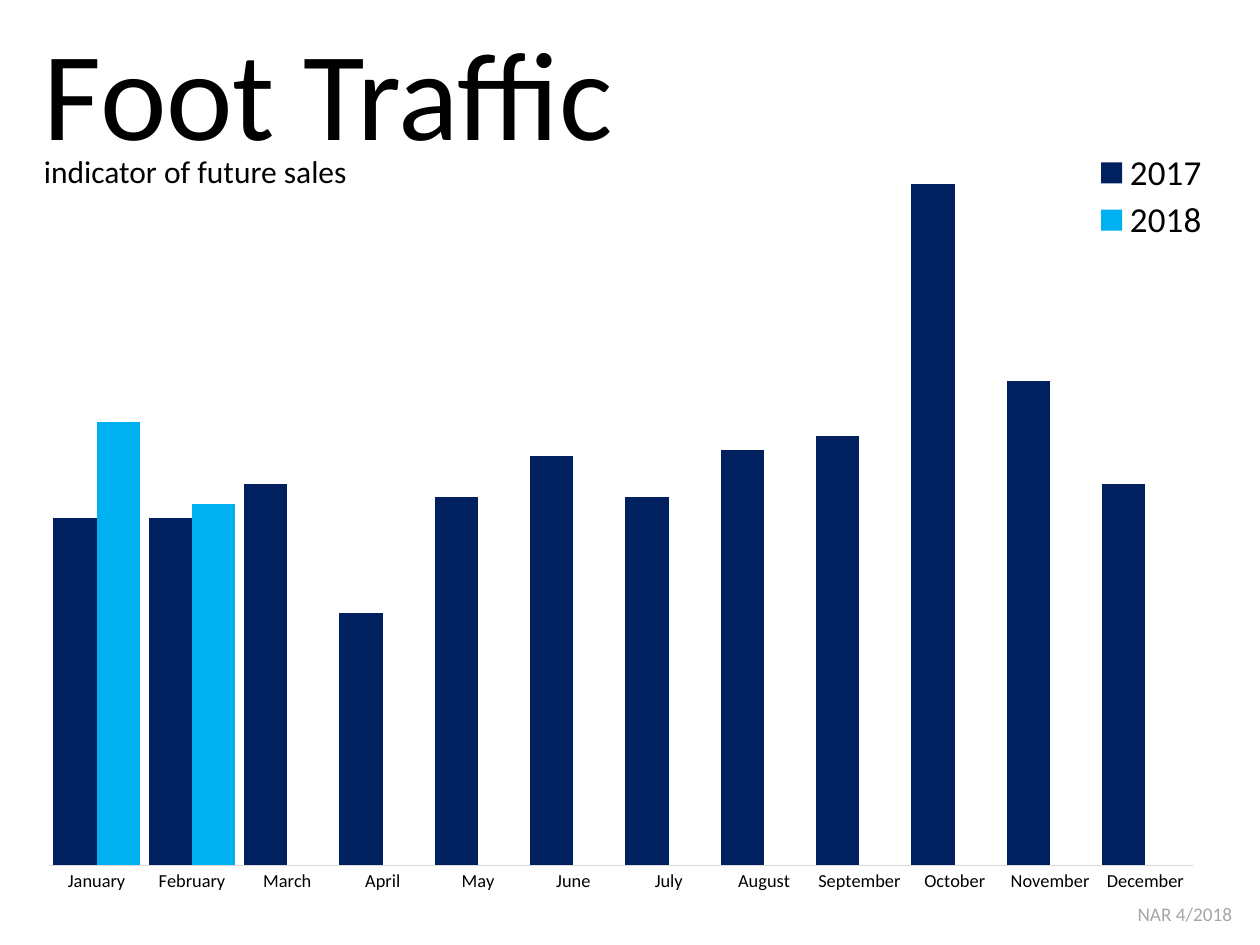
import pptx
import pptx.chart.data
import pptx.dml.color
import pptx.enum.chart
import pptx.enum.text
import pptx.oxml
import pptx.oxml.ns
import pptx.util
from pptx.util import Inches

MONTHS = ["January", "February", "March", "April", "May", "June", "July",
          "August", "September", "October", "November", "December"]
TRAFFIC = {
    "2017": ("002060", [51, 51, 56, 37, 54, 60, 54, 61, 63, 100, 71, 56]),
    "2018": ("00B0F0", [65, 53] + [None] * 10),
}


def color(code):
    return pptx.dml.color.RGBColor.from_string(code)


def layout(node, index, x, y, w, h, inner=False):
    """Place a chart part by fractions of the chart area."""
    for old in node.findall(pptx.oxml.ns.qn("c:layout")):
        node.remove(old)
    target = '<c:layoutTarget val="inner"/>' if inner else ""
    sizes = "".join(f'<c:{tag} val="{val}"/>'
                    for tag, val in zip("xywh", (x, y, w, h)))
    node.insert(index, pptx.oxml.parse_xml(
        f'<c:layout {pptx.oxml.ns.nsdecls("c")}><c:manualLayout>{target}'
        f'<c:xMode val="edge"/><c:yMode val="edge"/>{sizes}'
        '</c:manualLayout></c:layout>'))


class Deck:
    face = "Calibri"
    ink = "000000"
    pale = "A6A6A6"
    rule = "D9D9D9"

    def __init__(self, slide):
        self.slide = slide

    def style(self, font, size, code=None):
        font.name = self.face
        font.size = pptx.util.Pt(size)
        font.color.rgb = color(code or self.ink)

    def text(self, words, x, y, w, h, size, code=None, wrap=True, right=False):
        box = self.slide.shapes.add_textbox(
            Inches(x), Inches(y), Inches(w), Inches(h))
        frame = box.text_frame
        frame.word_wrap = wrap
        frame.text = words
        line = frame.paragraphs[0]
        if right:
            line.alignment = pptx.enum.text.PP_ALIGN.RIGHT
        self.style(line.runs[0].font, size, code)

    def columns(self, names, series, x, y, w, h):
        data = pptx.chart.data.CategoryChartData()
        data.categories = names
        for name, (_, vals) in series.items():
            data.add_series(name, vals)
        chart = self.slide.shapes.add_chart(
            pptx.enum.chart.XL_CHART_TYPE.COLUMN_CLUSTERED,
            Inches(x), Inches(y), Inches(w), Inches(h), data).chart
        chart.has_title = False
        self.style(chart.font, 10)

        plot = chart.plots[0]
        plot.gap_width = 20
        plot.overlap = 0
        plot.vary_by_categories = False
        for bars, (code, _) in zip(plot.series, series.values()):
            bars.format.fill.solid()
            bars.format.fill.fore_color.rgb = color(code)

        months = chart.category_axis
        months.major_tick_mark = pptx.enum.chart.XL_TICK_MARK.NONE
        months.format.line.color.rgb = color(self.rule)
        months.format.line.width = pptx.util.Pt(0.75)
        self.style(months.tick_labels.font, 10.5)
        scale = chart.value_axis
        scale.minimum_scale = 0
        scale.maximum_scale = 102
        scale.has_major_gridlines = False
        scale.visible = False

        chart.has_legend = True
        key = chart.legend
        key.position = pptx.enum.chart.XL_LEGEND_POSITION.CORNER
        key.include_in_layout = False
        self.style(key.font, 20)
        layout(key._element, 1, 0.9, 0.01, 0.1, 0.13)
        layout(chart._chartSpace.chart.plotArea, 0,
               0.02, 0.04, 0.96, 0.92, inner=True)


def main():
    prs = pptx.Presentation()
    prs.slide_width = Inches(10)
    prs.slide_height = Inches(7.5)
    deck = Deck(prs.slides.add_slide(prs.slide_layouts[6]))
    deck.columns(MONTHS, TRAFFIC, 0.2, 1.11, 9.46, 6)
    deck.text("Foot Traffic", 0.25, 0.07, 8.92, 1.1, 72)
    deck.text("indicator of future sales", 0.25, 1.16, 2.63, 0.4, 18,
              wrap=False)
    deck.text("NAR 4/2018", 8.75, 7.11, 1.13, 0.29, 11, deck.pale, right=True)
    prs.save("out.pptx")


if __name__ == "__main__":
    main()
